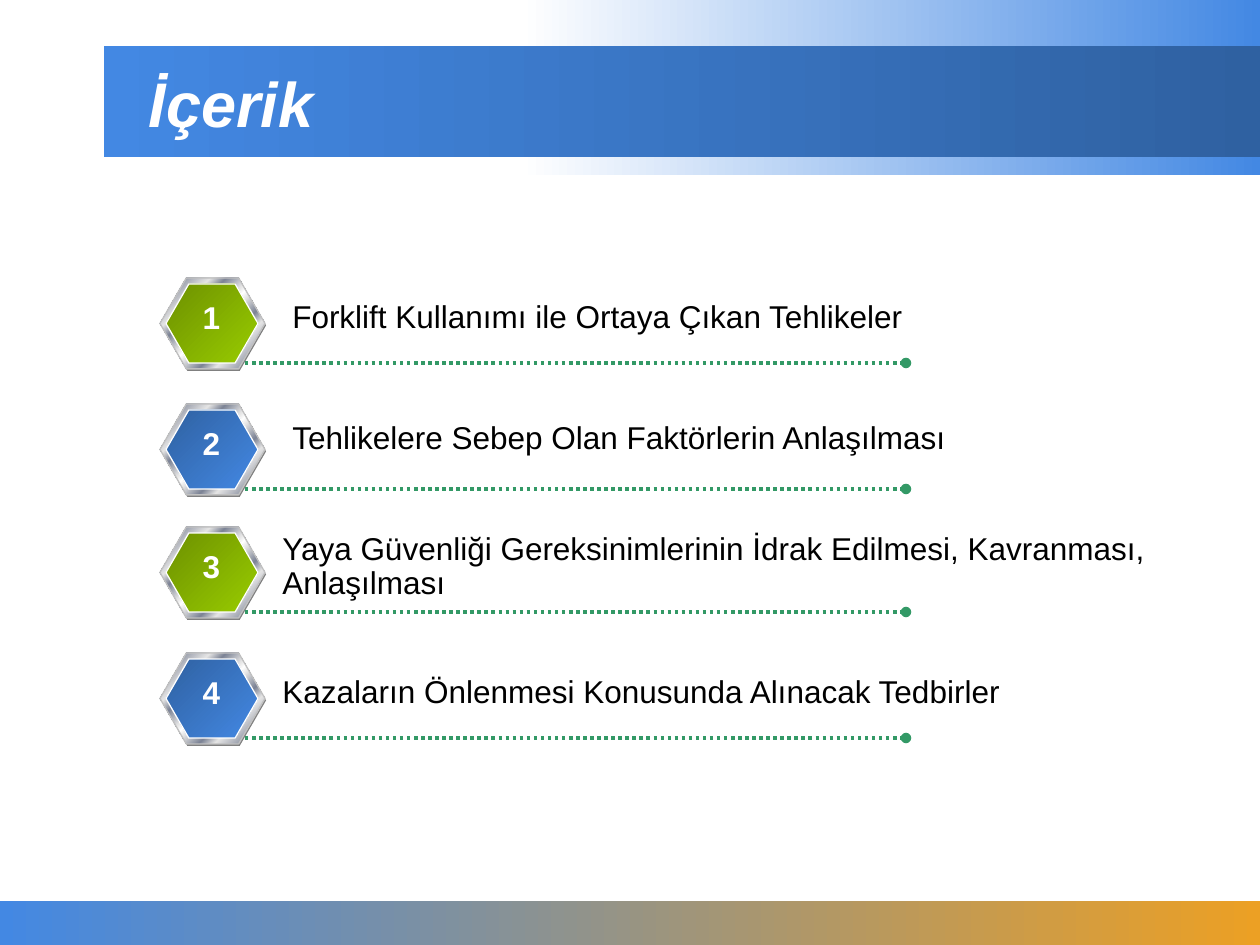
from lxml import etree
from pptx import Presentation
from pptx import util as u
from pptx.dml.color import RGBColor
from pptx.enum import dml, shapes, text
from pptx.oxml import parse_xml
from pptx.oxml.ns import qn

NS = 'xmlns:a="http://schemas.openxmlformats.org/drawingml/2006/main"'
BLUE, LIME, GOLD = "4388E3", "99CC00", "ECA024"
WHITE, BLACK, GREEN = "FFFFFF", "000000", "339966"
PALE, STEEL, GREY, RIM = "E6E6E6", "7D8496", "808080", "C0C0C0"
DARK = 46  # percent of shade at the dark end of a gradient
METAL = [(0, PALE), (8, STEEL), (26, PALE), (34, STEEL), (46, PALE), (50, WHITE),
         (54, PALE), (66, STEEL), (74, PALE), (92, STEEL), (100, PALE)]

# row top, colour, text box (left, offset from top, width, height), wrap, spacing, text
ROWS = [
    (278, LIME, (280, 13, 641, 50), False, 1,
     "Forklift Kullanımı ile Ortaya Çıkan Tehlikeler"),
    (404, BLUE, (280, 12, 684, 47), False, 0.9,
     "Tehlikelere Sebep Olan Faktörlerin Anlaşılması"),
    (527, LIME, (270, 0, 896, 82), True, 0.9,
     "Yaya Güvenliği Gereksinimlerinin İdrak Edilmesi, Kavranması, Anlaşılması"),
    (653, BLUE, (270, 17, 886, 47), True, 0.9,
     "Kazaların Önlenmesi Konusunda Alınacak Tedbirler"),
]


def px(*nums):
    return [u.Emu(round(n * 914400 / 126)) for n in nums]


def rgb(code):
    return RGBColor.from_string(code)


def blend(stops, angle):
    """Gradient fill from (position, colour[, shade]) stops, all in percent."""
    marks = ""
    for pos, code, *shade in stops:
        tone = "".join(f'<a:shade val="{s * 1000}"/>' for s in shade)
        marks += (f'<a:gs pos="{pos * 1000}"><a:srgbClr val="{code}">{tone}'
                  '</a:srgbClr></a:gs>')
    return parse_xml(f'<a:gradFill {NS} rotWithShape="1"><a:gsLst>{marks}</a:gsLst>'
                     f'<a:lin ang="{angle * 60000}" scaled="0"/></a:gradFill>')


def write(frame, words, size=18, color=BLACK, bold=False, italic=False,
          align=text.PP_ALIGN.LEFT, space=1):
    para = frame.paragraphs[0]
    para.alignment, para.line_spacing = align, space
    run = para.add_run()
    run.text = words
    font = run.font
    font.name, font.size, font.bold, font.italic = "Arial", u.Pt(size), bold, italic
    font.color.rgb = rgb(color)


class Deck:
    """Holds the slide and the shape tree that new elements go to."""

    def __init__(self):
        self.prs = Presentation()
        self.prs.slide_width, self.prs.slide_height = px(1260, 945)
        self.slide = self.prs.slides.add_slide(self.prs.slide_layouts[5])
        self.tree = self.slide.shapes

    def group(self):
        self.tree = self.slide.shapes.add_group_shape().shapes

    def shape(self, kind, box, fill, angle=0, line=None):
        """Fill is a colour or a list of gradient stops."""
        item = self.tree.add_shape(kind, *px(*box))
        item.shadow.inherit = False
        item.fill.solid()
        if isinstance(fill, str):
            item.fill.fore_color.rgb = rgb(fill)
        else:
            props = item._element.spPr
            props.replace(props.find(qn("a:solidFill")), blend(fill, angle))
        if line:
            item.line.color.rgb = rgb(line)
            item.line.width = u.Pt(0.75)
        else:
            item.line.fill.background()
        return item

    def bar(self, box, *stops):
        self.shape(shapes.MSO_SHAPE.RECTANGLE, box, stops)

    def hexa(self, box, fill, line=None):
        item = self.shape(shapes.MSO_SHAPE.HEXAGON, box, fill, 45, line)
        item.adjustments[0] = 0.289

    def title(self, box, words):
        item = self.slide.shapes.title
        item.left, item.top, item.width, item.height = px(*box)
        item.text_frame.vertical_anchor = text.MSO_ANCHOR.MIDDLE
        write(item.text_frame, words, size=36, color=WHITE, bold=True, italic=True)
        item._element.getparent().append(item._element)  # in front of the bars

    def label(self, box, words, wrap=False, **form):
        frame = self.tree.add_textbox(*px(*box)).text_frame
        frame.word_wrap = wrap
        frame.auto_size = text.MSO_AUTO_SIZE.SHAPE_TO_FIT_TEXT
        write(frame, words, **form)

    def rule(self, left, right, top):
        """Dotted line with a round end."""
        item = self.tree.add_connector(shapes.MSO_CONNECTOR.STRAIGHT,
                                       *px(left, top, right, top))
        item.line.color.rgb = rgb(GREEN)
        item.line.width = u.Pt(2)
        item.line.dash_style = dml.MSO_LINE.ROUND_DOT
        props = item._element.spPr
        etree.SubElement(props.find(qn("a:ln")), qn("a:tailEnd"), type="oval")
        etree.SubElement(props, qn("a:effectLst"))

    def row(self, num, top, color, box, wrap, space, words):
        self.group()
        self.hexa((161, top + 2, 105, 91), GREY)
        self.hexa((160, top, 105, 91), METAL, RIM)
        self.hexa((166, top + 6, 92, 79), [(0, color, DARK), (100, color)], WHITE)
        self.rule(245, 906, top + 85)
        left, drop, wide, high = box
        self.label((left, top + drop, wide, high), words, wrap, space=space)
        self.label((190, top + 14, 43, 50), str(num), color=WHITE, bold=True,
                   align=text.PP_ALIGN.CENTER)


def main():
    deck = Deck()
    deck.bar((520, 0, 740, 175), (0, WHITE), (100, BLUE))
    deck.bar((0, 901, 1260, 44), (0, BLUE), (100, GOLD))
    deck.bar((104, 46, 1156, 111), (0, BLUE), (100, BLUE, DARK))
    deck.title((136, 63, 1103, 78), "İçerik")
    for num, row in enumerate(ROWS, 1):
        deck.row(num, *row)
    deck.prs.save("out.pptx")


if __name__ == "__main__":
    main()
